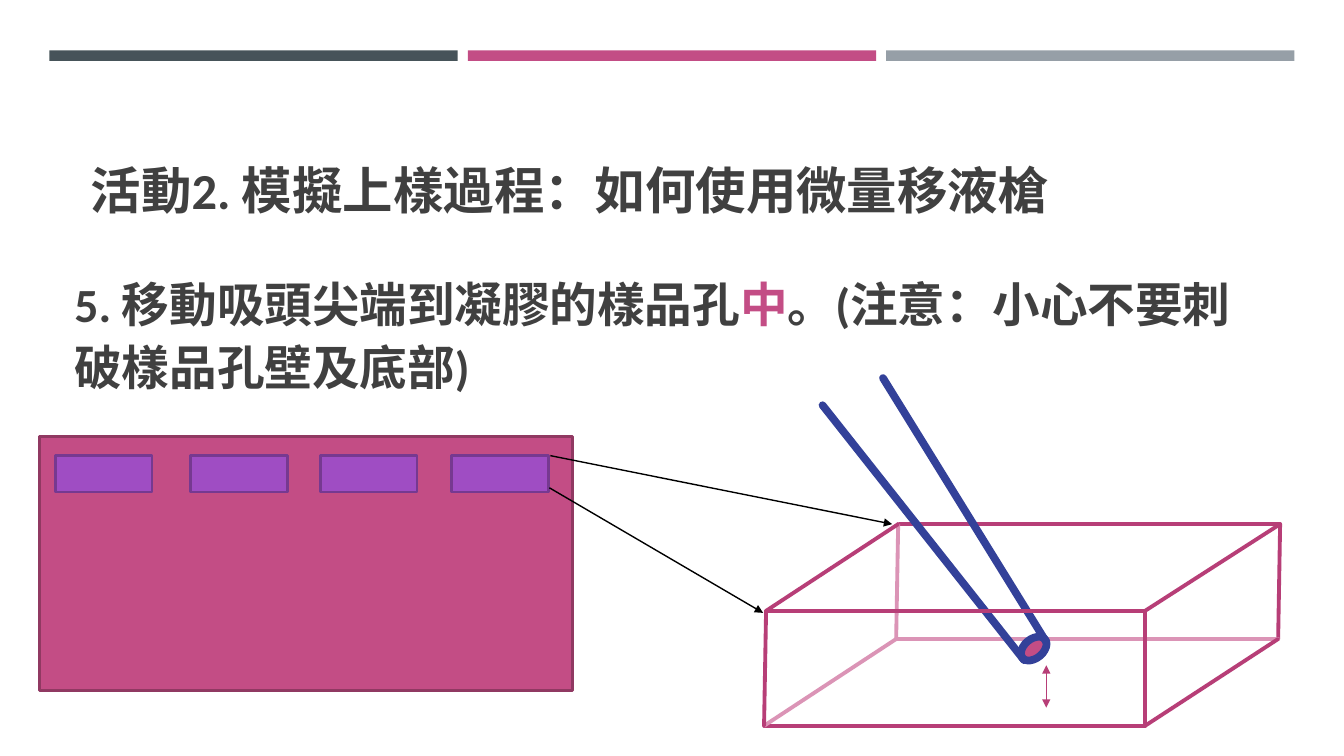
from pptx import Presentation
from pptx.dml.color import RGBColor
from pptx.enum.shapes import MSO_CONNECTOR, MSO_SHAPE
from pptx.enum.text import MSO_ANCHOR, MSO_AUTO_SIZE, PP_ALIGN
from pptx.oxml.ns import qn
from pptx.util import Inches, Pt
from lxml import etree

RECT, OVAL = MSO_SHAPE.RECTANGLE, MSO_SHAPE.OVAL
STRAIGHT = MSO_CONNECTOR.STRAIGHT
LEFT, BOTTOM, MIDDLE = PP_ALIGN.LEFT, MSO_ANCHOR.BOTTOM, MSO_ANCHOR.MIDDLE
TITLE_ONLY = 5
WIDTH, HEIGHT = Inches(13.33), Inches(7.5)

DARK, PINK, GREY, TEXT, BLACK = "465359", "C34D85", "969FA7", "404040", "000000"
EDGE, HIDDEN_EDGE, PIPETTE = "B73E77", "DB94B6", "334199"
GEL_EDGE, WELL, WELL_EDGE = "903962", "9F4DC3", "763990"


def color(value):
    return RGBColor.from_string(value)


# Places are percentages of the slide's width and height
def across(share):
    return round(WIDTH * share / 100)


def down(share):
    return round(HEIGHT * share / 100)


def frame(left, top, width, height):
    return across(left), down(top), across(width), down(height)


def add_block(slide, kind, place, fill, edge=None, weight=0, rotation=0):
    block = slide.shapes.add_shape(kind, *frame(*place))
    block.shadow.inherit = False
    block.rotation = rotation
    block.fill.solid()
    block.fill.fore_color.rgb = color(fill)
    if edge:
        block.line.color.rgb = color(edge)
        block.line.width = Pt(weight)
    else:
        block.line.fill.background()


def add_line(slide, start, end, stroke, weight, arrowheads=()):
    line = slide.shapes.add_connector(
        STRAIGHT, across(start[0]), down(start[1]), across(end[0]), down(end[1]))
    line.line.color.rgb = color(stroke)
    line.line.width = Pt(weight)
    outline = line.line._get_or_add_ln()
    outline.set("cap", "flat" if arrowheads else "rnd")
    for end_tag in arrowheads:
        etree.SubElement(outline, qn(end_tag), type="triangle")
    etree.SubElement(line._element.spPr, qn("a:effectLst"))


def write(box, runs, size, anchor, spacing):
    text = box.text_frame
    settings = {"word_wrap": True, "auto_size": MSO_AUTO_SIZE.NONE,
                "vertical_anchor": anchor}
    for name, value in settings.items():
        setattr(text, name, value)
    paragraph = text.paragraphs[0]
    paragraph.alignment = LEFT
    paragraph.line_spacing = spacing
    for words, ink in runs:
        run = paragraph.add_run()
        run.text = words
        for name, value in {"name": "Calibri", "size": Pt(size), "bold": True}.items():
            setattr(run.font, name, value)
        run.font.color.rgb = color(ink)


def add_header(slide):
    for column, fill in enumerate((DARK, PINK, GREY)):
        add_block(slide, RECT, (3.68 + 31.13 * column, 6.67, 30.38, 1.39), fill)
    title = slide.shapes.title
    title.left, title.top, title.width, title.height = frame(6, 12.4, 90.45, 17.33)
    write(title, [("活動2. 模擬上樣過程：如何使用微量移液槍", TEXT)], 36, BOTTOM, 1)


def add_step(slide):
    step = slide.shapes.add_textbox(*frame(4.8, 34.67, 90.45, 18.53))
    write(step, [("5. 移動吸頭尖端到凝膠的樣品孔", TEXT), ("中", PINK),
                 ("。(注意：小心不要刺破樣品孔壁及底部)", TEXT)], 34, MIDDLE, 1.1)


def add_enlarged_well(slide):
    # Corners, clockwise from the top left of each face
    front = [(57, 80.8), (85.2, 80.8), (85.2, 96), (56.85, 96)]
    back = [(66.83, 69.33), (95.25, 69.33), (95.1, 84.53), (66.68, 84.53)]

    # Far side, seen through the well
    for corner in range(4):
        stroke = HIDDEN_EDGE if corner >= 2 else EDGE
        add_line(slide, back[corner], back[(corner + 1) % 4], stroke, 2.75)

    # Pipette tip
    add_block(slide, OVAL, (75.83, 84.53, 2.18, 2.53), PINK, PIPETTE, 5.5, 320)
    add_line(slide, (77.85, 84.93), (65.7, 50), PIPETTE, 5.5)
    add_line(slide, (76.2, 87.33), (61.2, 53.6), PIPETTE, 5.5)

    # Near side and depth edges
    for corner in range(4):
        stroke = HIDDEN_EDGE if corner == 3 else EDGE
        add_line(slide, front[corner], back[corner], stroke, 2.75)
        add_line(slide, front[corner], front[(corner + 1) % 4], EDGE, 2.75)

    # Gap between the tip and the bottom
    add_line(slide, (77.85, 88), (77.85, 93.6), EDGE, 1, ("a:headEnd", "a:tailEnd"))


def add_gel(slide):
    add_block(slide, RECT, (2.93, 57.73, 39.68, 33.6), PINK, GEL_EDGE, 1.75)
    for left in (4.13, 14.18, 23.85, 33.6):
        add_block(slide, RECT, (left, 60.27, 7.2, 4.8), WELL, WELL_EDGE, 1.75)

    # Arrows from the last well to its enlargement
    for start, end in (((40.95, 60.27), (66.38, 69.33)),
                       ((40.88, 64.53), (56.78, 81.07))):
        add_line(slide, start, end, BLACK, 1, ("a:tailEnd",))


def main():
    deck = Presentation()
    deck.slide_width, deck.slide_height = WIDTH, HEIGHT
    slide = deck.slides.add_slide(deck.slide_layouts[TITLE_ONLY])
    add_header(slide)
    add_step(slide)
    add_enlarged_well(slide)
    add_gel(slide)
    deck.save("out.pptx")


if __name__ == "__main__":
    main()
